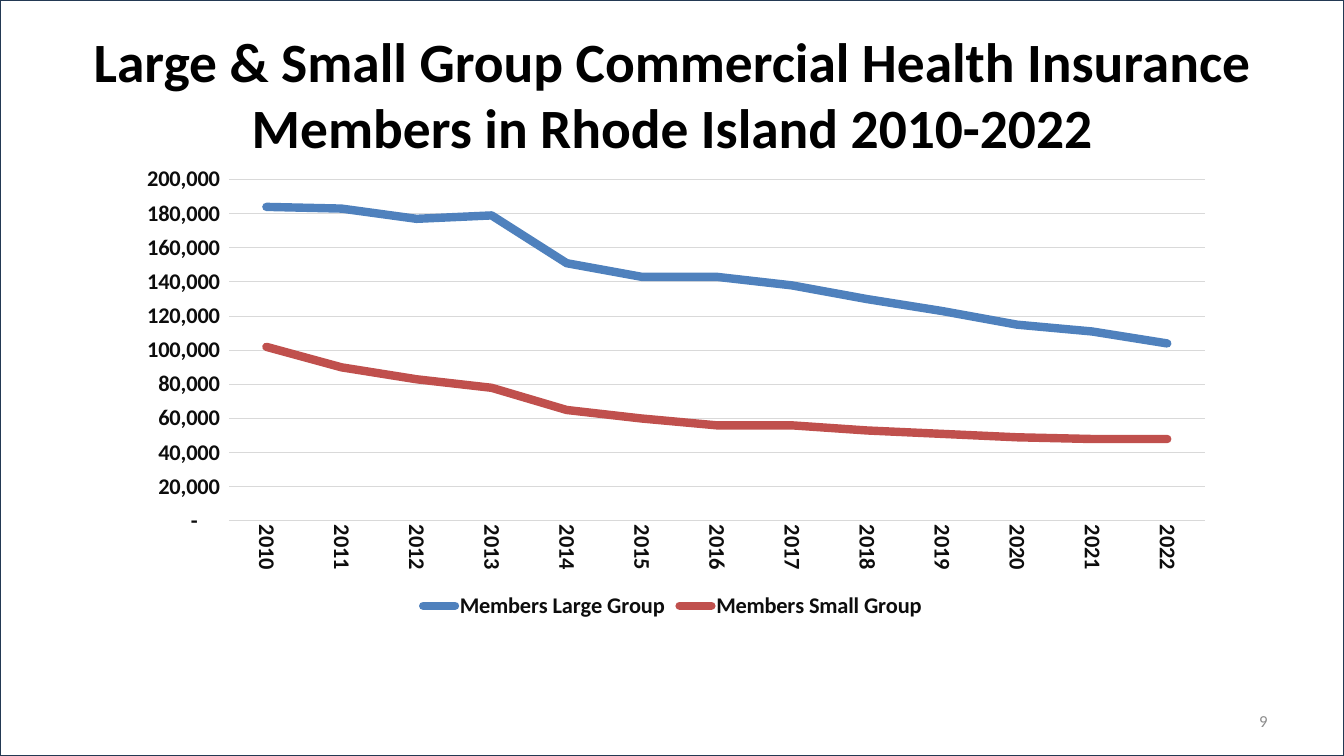
from lxml import etree
from pptx import Presentation
from pptx.chart.data import CategoryChartData
from pptx.dml.color import RGBColor
from pptx.enum.chart import XL_CHART_TYPE as ChartType, XL_LEGEND_POSITION as LegendPosition
from pptx.enum.chart import XL_TICK_MARK as TickMark
from pptx.enum.shapes import MSO_SHAPE as ShapeType
from pptx.enum.text import MSO_ANCHOR as Anchor, PP_ALIGN as Align
from pptx.oxml.ns import qn
from pptx.util import Inches, Pt

FONT = "Calibri"
GRID_COLOR = "D9D9D9"
NUMBER_FORMAT = '_(* #,##0_);_(* \\(#,##0\\);_(* "-"??_);_(@_)'
YEARS = [str(year) for year in range(2010, 2023)]
MEMBERS = [
    ("Members Large Group", "4F81BD",
     [184000, 183000, 177000, 179000, 151000, 143000, 143000,
      138000, 130000, 123000, 115000, 111000, 104000]),
    ("Members Small Group", "C0504D",
     [102000, 90000, 83000, 78000, 65000, 60000, 56000,
      56000, 53000, 51000, 49000, 48000, 48000]),
]
PLOT_LAYOUT = {"layoutTarget": "inner", "xMode": "edge", "yMode": "edge",
               "x": 0.1, "y": 0.05, "w": 0.88, "h": 0.73}


def rgb(color):
    return RGBColor.from_string(color)


def style_font(font, size, color, bold):
    font.name = FONT
    font.size = Pt(size)
    font.bold = bold
    font.color.rgb = rgb(color)


def style_line(line, color, width):
    line.color.rgb = rgb(color)
    line.width = Pt(width)


def add_text(slide, text, box, size, color, align, bold=False):
    shape = slide.shapes.add_textbox(*map(Inches, box))
    frame = shape.text_frame
    frame.word_wrap = True
    frame.vertical_anchor = Anchor.MIDDLE
    paragraph = frame.paragraphs[0]
    paragraph.alignment = align
    run = paragraph.add_run()
    run.text = text
    style_font(run.font, size, color, bold)


def style_axes(chart):
    years, members = chart.category_axis, chart.value_axis
    for axis in (years, members):
        axis.major_tick_mark = axis.minor_tick_mark = TickMark.NONE
        style_font(axis.tick_labels.font, 16, "0D0D0D", True)
    style_line(years.format.line, GRID_COLOR, 0.75)
    years._element.find(qn("c:txPr")).find(qn("a:bodyPr")).set("rot", "5400000")
    members.format.line.fill.background()
    style_line(members.major_gridlines.format.line, GRID_COLOR, 0.75)
    members.minimum_scale = 0
    members.maximum_scale = 200000
    members.major_unit = 20000
    members.tick_labels.number_format = NUMBER_FORMAT
    members.tick_labels.number_format_is_linked = False


def place_plot(chart):
    plot_area = chart._chartSpace.chart.plotArea
    layout = plot_area.find(qn("c:layout"))
    if layout is None:
        layout = etree.Element(qn("c:layout"))
        plot_area.insert(0, layout)
    manual = etree.SubElement(layout, qn("c:manualLayout"))
    for name, value in PLOT_LAYOUT.items():
        etree.SubElement(manual, qn(f"c:{name}")).set("val", str(value))


def add_line_chart(slide, box):
    data = CategoryChartData(number_format=NUMBER_FORMAT)
    data.categories = YEARS
    for name, _, values in MEMBERS:
        data.add_series(name, values)
    chart = slide.shapes.add_chart(ChartType.LINE, *map(Inches, box), data).chart
    style_font(chart.font, 16, "0D0D0D", True)
    chart.has_title = False
    chart.has_legend = True
    chart.legend.position = LegendPosition.BOTTOM
    chart.legend.include_in_layout = False
    style_font(chart.legend.font, 16, "0D0D0D", True)
    chart.plots[0].vary_by_categories = False
    for series, (_, color, _) in zip(chart.plots[0].series, MEMBERS):
        series.smooth = False
        style_line(series.format.line, color, 6)
        series.format.line._ln.set("cap", "rnd")
    style_axes(chart)
    place_plot(chart)


def add_border(slide, width, height):
    shape = slide.shapes.add_shape(ShapeType.RECTANGLE, 0, 0, width, height)
    shape.shadow.inherit = False
    shape.fill.background()
    style_line(shape.line, "233953", 2)


def main():
    presentation = Presentation()
    presentation.slide_width = Inches(13.33)
    presentation.slide_height = Inches(7.5)
    slide = presentation.slides.add_slide(presentation.slide_layouts[6])
    add_text(slide, "Large & Small Group Commercial Health Insurance Members in Rhode Island 2010-2022",
             (0.67, 0.3, 12, 1.25), 39.6, "000000", Align.CENTER, bold=True)
    add_text(slide, "9", (9.56, 6.95, 3.11, 0.4), 12, "8C8C8C", Align.RIGHT)
    add_line_chart(slide, (1.17, 1.55, 11, 4.64))
    add_border(slide, presentation.slide_width, presentation.slide_height)
    presentation.save("out.pptx")


if __name__ == "__main__":
    main()
